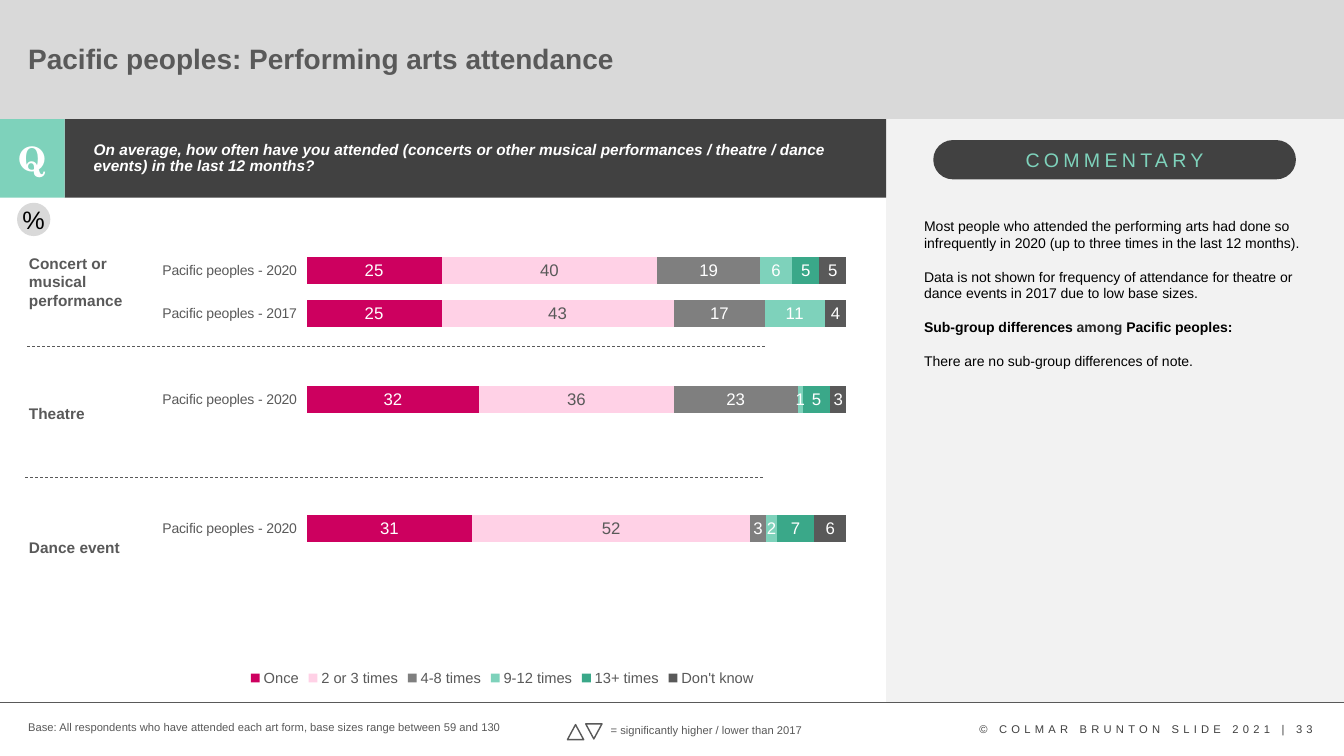
from lxml import etree
from pptx import Presentation
from pptx.chart.data import CategoryChartData
from pptx.dml.color import RGBColor
from pptx.enum.chart import XL_CHART_TYPE, XL_LABEL_POSITION, XL_LEGEND_POSITION
from pptx.enum.dml import MSO_LINE
from pptx.enum.shapes import MSO_CONNECTOR, MSO_SHAPE
from pptx.enum.text import MSO_ANCHOR, PP_ALIGN
from pptx.oxml.ns import qn
from pptx.util import Cm, Pt

TITLE = "Pacific peoples: Performing arts attendance"
QUESTION = ("On average, how often have you attended (concerts or other musical performances"
            " / theatre / dance events) in the last 12 months?")
COMMENTARY = [
    "Most people who attended the performing arts had done so infrequently in 2020"
    " (up to three times in the last 12 months).",
    "Data is not shown for frequency of attendance for theatre or dance events in 2017"
    " due to low base sizes.",
    [("Sub-group differences ", "black", True), ("among", "near_black", True),
     (" Pacific peoples:", "black", True)],
    "There are no sub-group differences of note.",
]
BASE = "Base: All respondents who have attended each art form, base sizes range between 59 and 130"
KEY = "= significantly higher / lower than 2017"
FOOTER = "© COLMAR BRUNTON SLIDE 2021 | 33"
ART_FORMS = [("Concert or musical performance", 6.27), ("Theatre", 10.06), ("Dance event", 13.44)]
DIVIDERS = [(0.69, 8.74), (0.64, 12.04)]

P2020, P2017 = "Pacific peoples - 2020", "Pacific peoples - 2017"
CATEGORIES = ["", P2020, "", "", P2020, "", P2017, P2020]
SERIES = [
    ("Once", "pink", "white", (31, 32, 25, 25)),
    ("2 or 3 times", "pale_pink", "grey", (52, 36, 43, 40)),
    ("4-8 times", "mid_grey", "white", (3, 23, 17, 19)),
    ("9-12 times", "mint", "white", (2, 1, 11, 6)),
    ("13+ times", "green", "white", (7, 5, 0, 5)),
    ("Don't know", "grey", "white", (6, 3, 4, 5)),
]
PLOT = {"x": 0.227, "y": 0.114, "w": 0.753, "h": 0.691}

THEME = {
    "font": "Arial", "serif": "TeX Gyre Schola",
    "size": {"title": 20, "q": 24, "percent": 18, "pill": 14, "value": 12, "label": 11,
             "legend": 10.5, "body": 10, "note": 8},
    "color": {"white": "FFFFFF", "black": "000000", "near_black": "262626", "dark": "414141",
              "footer": "404040", "grey": "595959", "mid_grey": "7F7F7F", "header": "D9D9D9",
              "panel": "F2F2F2", "mint": "7ED2BB", "green": "3AA889", "pink": "CD005F",
              "pale_pink": "FFD1E6"},
}

W, H = 33.87, 19.05
BAND_TOP, BAND_H, FOOT_Y = 3.0, 1.98, 17.7
Q_W, PANEL_X = 1.63, 22.33


def color(name):
    return RGBColor.from_string(THEME["color"][name])


def style(font, size, name="grey", bold=False, italic=False, face=THEME["font"]):
    font.size = Pt(THEME["size"][size])
    font.name = face
    font.bold = bold
    font.italic = italic
    font.color.rgb = color(name)


def write(sp, paragraphs, size="label", name="grey", bold=False, italic=False,
          face=THEME["font"], align=PP_ALIGN.LEFT, anchor=MSO_ANCHOR.TOP, line=None,
          gap=0, tracking=0, inset=None):
    tf = sp.text_frame
    tf.word_wrap = True
    tf.vertical_anchor = anchor
    if inset is not None:
        tf.margin_left = tf.margin_right = tf.margin_top = tf.margin_bottom = Cm(inset)
    if isinstance(paragraphs, str):
        paragraphs = [paragraphs]
    for i, runs in enumerate(paragraphs):
        p = tf.add_paragraph() if i else tf.paragraphs[0]
        p.alignment = align
        if line:
            p.line_spacing = line
        if i and gap:
            p.space_before = Pt(gap)
        for text, ink, weight in [(runs, name, bold)] if isinstance(runs, str) else runs:
            r = p.add_run()
            r.text = text
            style(r.font, size, ink, weight, italic, face)
            if tracking:
                r._r.get_or_add_rPr().set("spc", str(tracking * 100))


def box(s, x, y, w, h):
    return s.shapes.add_textbox(Cm(x), Cm(y), Cm(w), Cm(h))


def block(s, kind, x, y, w, h, fill, line=None):
    sp = s.shapes.add_shape(kind, Cm(x), Cm(y), Cm(w), Cm(h))
    sp.shadow.inherit = False
    sp.fill.solid()
    sp.fill.fore_color.rgb = color(fill)
    if line:
        sp.line.color.rgb = color(line)
        sp.line.width = Pt(1)
    else:
        sp.line.fill.background()
    return sp


def rule(s, x, y, w, dash=None):
    ln = s.shapes.add_connector(MSO_CONNECTOR.STRAIGHT, Cm(x), Cm(y), Cm(x + w), Cm(y))
    ln.line.color.rgb = color("grey")
    ln.line.width = Pt(0.5)
    if dash:
        ln.line.dash_style = dash
    etree.SubElement(ln._element.spPr, qn("a:effectLst"))


def set_plot_area(chart):
    area = chart._chartSpace.chart.plotArea
    for old in area.findall(qn("c:layout")):
        area.remove(old)
    layout = etree.Element(qn("c:layout"))
    manual = etree.SubElement(layout, qn("c:manualLayout"))
    settings = [("layoutTarget", "inner"), ("xMode", "edge"), ("yMode", "edge"), *PLOT.items()]
    for tag, val in settings:
        etree.SubElement(manual, qn("c:" + tag)).set("val", str(val))
    area.insert(0, layout)


def add_attendance_chart(s):
    data = CategoryChartData(number_format="0")
    data.categories = CATEGORIES
    for name, _, _, shares in SERIES:
        share = iter(shares)
        data.add_series(name, [next(share) if c else None for c in CATEGORIES])
    chart = s.shapes.add_chart(XL_CHART_TYPE.BAR_STACKED_100, Cm(3.63), Cm(4.85),
                               Cm(18.06), Cm(12.55), data).chart
    chart.has_title = False
    style(chart.font, "body", "black")
    chart.has_legend = True
    chart.legend.position = XL_LEGEND_POSITION.BOTTOM
    chart.legend.include_in_layout = False
    style(chart.legend.font, "legend")
    style(chart.category_axis.tick_labels.font, "body")
    chart.category_axis.format.line.fill.background()
    chart.value_axis.has_major_gridlines = False
    chart.value_axis.visible = False
    plot = chart.plots[0]
    plot.vary_by_categories = False
    plot.gap_width, plot.overlap = 60, 100
    for series, (_, fill, ink, _) in zip(plot.series, SERIES):
        series.format.fill.solid()
        series.format.fill.fore_color.rgb = color(fill)
        labels = series.data_labels
        labels.show_value = True
        labels.number_format = "0;;"
        labels.number_format_is_linked = False
        labels.position = XL_LABEL_POSITION.CENTER
        style(labels.font, "value", ink)
    set_plot_area(chart)


def main():
    prs = Presentation()
    prs.slide_width, prs.slide_height = Cm(W), Cm(H)
    s = prs.slides.add_slide(prs.slide_layouts[6])
    rect = MSO_SHAPE.RECTANGLE
    middle = {"align": PP_ALIGN.CENTER, "anchor": MSO_ANCHOR.MIDDLE, "inset": 0}

    block(s, rect, 0, 0, W, BAND_TOP, "header")
    block(s, rect, PANEL_X, BAND_TOP, W - PANEL_X, FOOT_Y - BAND_TOP, "panel")
    block(s, rect, Q_W, BAND_TOP, PANEL_X - Q_W, BAND_H, "dark")
    q = block(s, rect, 0, BAND_TOP, Q_W, BAND_H, "mint")
    write(q, "Q", size="q", name="white", bold=True, face=THEME["serif"], **middle)
    rule(s, 0, FOOT_Y, W)

    write(box(s, 0.46, 0.53, 28.42, 1.98), TITLE, size="title", bold=True,
          anchor=MSO_ANCHOR.MIDDLE, line=0.9)
    write(box(s, 2.11, 3.45, 19.3, 1.17), QUESTION, name="white", bold=True, italic=True, line=0.9)

    add_attendance_chart(s)
    for art_form, y in ART_FORMS:
        write(box(s, 0.48, y, 3.58, 0.74), art_form, bold=True)
    for x, y in DIVIDERS:
        rule(s, x, y, 18.59, MSO_LINE.DASH)
    percent = block(s, MSO_SHAPE.OVAL, 0.43, 5.11, 0.84, 0.84, "header")
    write(percent, "%", size="percent", name="black", **middle)

    pill = block(s, MSO_SHAPE.ROUNDED_RECTANGLE, 23.52, 3.53, 9.14, 0.99, "dark")
    pill.adjustments[0] = 0.5
    write(pill, "COMMENTARY", size="pill", name="mint", tracking=3, **middle)
    write(box(s, 23.04, 5.36, 10.06, 4.52), COMMENTARY, size="body", name="black", gap=12)

    write(box(s, 0.46, 18.03, 12.88, 0.61), BASE, size="note")
    write(box(s, 15.14, 18.11, 6, 0.61), KEY, size="note")
    for x, y, turn in [(14.3, 18.26, 0), (14.76, 18.24, 180)]:
        block(s, MSO_SHAPE.ISOSCELES_TRIANGLE, x, y, 0.41, 0.38, "white", "grey").rotation = turn
    write(box(s, 24.43, 18.08, 9.17, 0.61), FOOTER, size="note", name="footer", tracking=3)

    prs.save("out.pptx")


if __name__ == "__main__":
    main()
